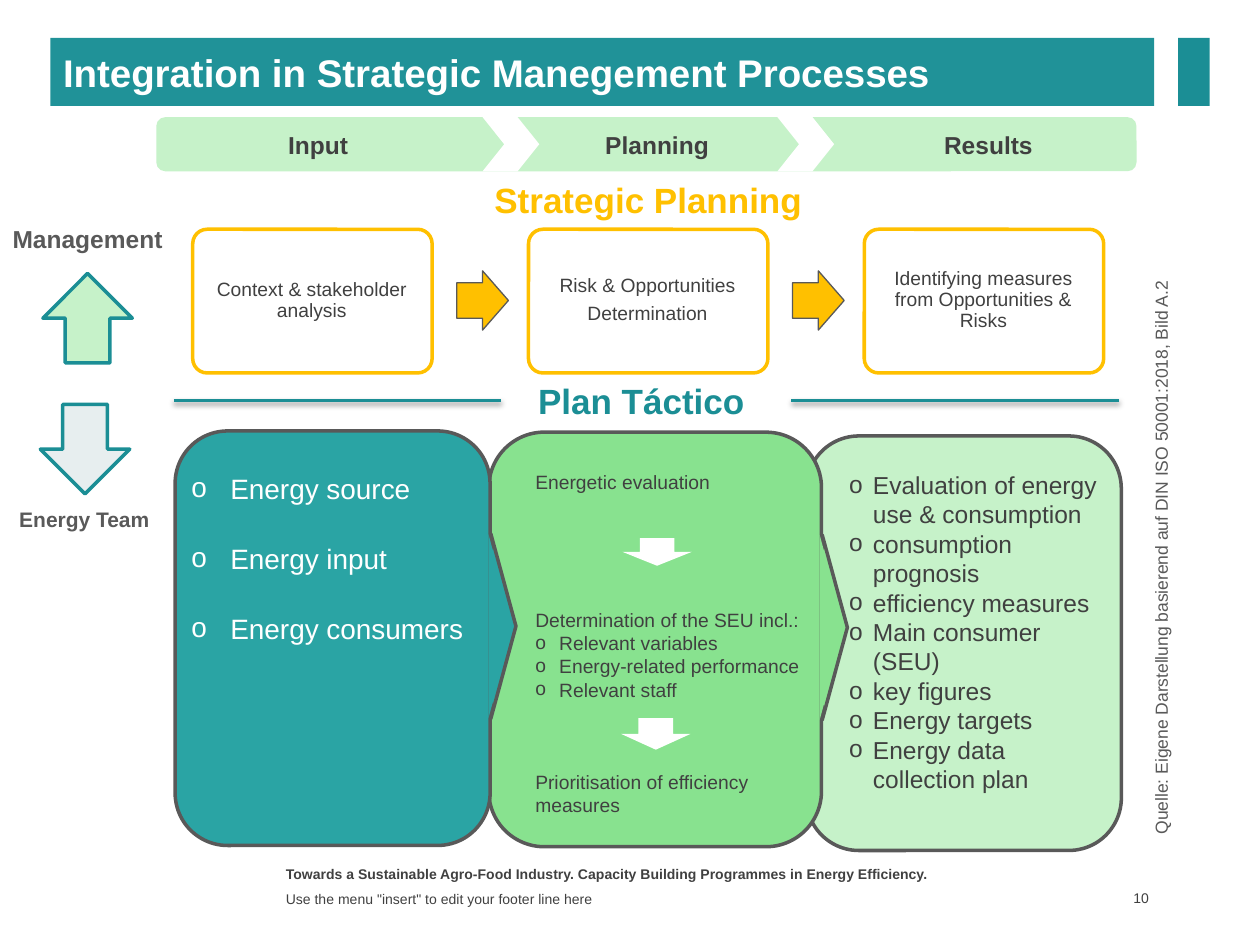
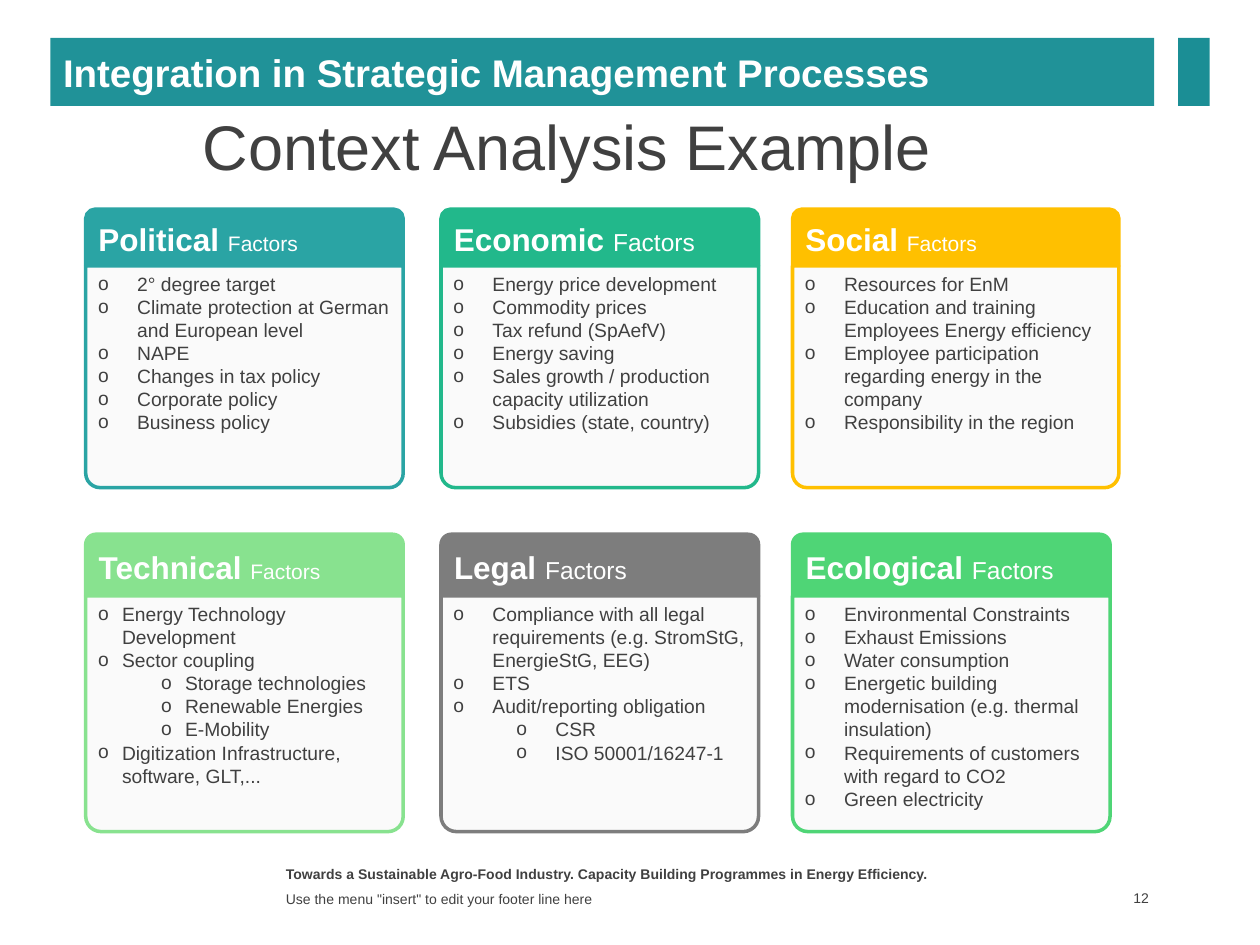
from lxml import etree
from pptx import Presentation
from pptx.dml.color import RGBColor
from pptx.enum.shapes import MSO_CONNECTOR, MSO_SHAPE
from pptx.enum.text import MSO_ANCHOR, MSO_AUTO_SIZE, PP_ALIGN
from pptx.oxml.ns import qn
from pptx.util import Inches, Pt

COLORS = {
    "text": "404040", "grey": "595959", "white": "FFFFFF", "panel": "FAFAFA",
    "title": "209298", "teal": "1B8E95", "sea": "2AA4A4", "emerald": "22B88B",
    "yellow": "FFC000", "green": "88E28F", "mint": "C6F2C9", "mist": "E7EEEF",
    "slate": "7D7D7D", "leaf": "4FD576",
}
FONT = "Arial"
TITLE_ONLY = 5
CENTER = PP_ALIGN.CENTER
MIDDLE = MSO_ANCHOR.MIDDLE


def rgb(name):
    return RGBColor.from_string(COLORS[name])


def add_paragraph(frame, text, size=11, color="text", bold=False, align=PP_ALIGN.LEFT,
                  indent=0, level=0, before=None, after=None, spacing=None):
    first = frame.paragraphs[0]
    paragraph = frame.add_paragraph() if first.runs else first
    if indent:
        properties = paragraph._p.get_or_add_pPr()
        properties.set("marL", str(Inches(indent + level / 2)))
        properties.set("indent", str(-Inches(indent)))
        etree.SubElement(properties, qn("a:buFont")).set("typeface", FONT)
        etree.SubElement(properties, qn("a:buChar")).set("char", "o")
    paragraph.level = level
    paragraph.alignment = align
    if before is not None:
        paragraph.space_before = Pt(before)
    if after is not None:
        paragraph.space_after = Pt(after)
    if spacing is not None:
        paragraph.line_spacing = spacing
    pieces = [(text, size, bold)] if isinstance(text, str) else text
    for piece, piece_size, piece_bold in pieces:
        run = paragraph.add_run()
        run.text = piece
        run.font.name = FONT
        run.font.size = Pt(piece_size)
        run.font.bold = piece_bold
        run.font.color.rgb = rgb(color)


class SlideBuilder:
    def __init__(self, presentation):
        self.presentation = presentation
        self.slide = None

    def start(self, title, number):
        layout = self.presentation.slide_layouts[TITLE_ONLY]
        self.slide = self.presentation.slides.add_slide(layout)
        shape = self.slide.shapes.title
        shape.left, shape.top, shape.width, shape.height = map(Inches, (0.4, 0.3, 8.76, 0.54))
        shape.fill.solid()
        shape.fill.fore_color.rgb = rgb("title")
        self.prepare(shape.text_frame, MIDDLE)
        add_paragraph(shape.text_frame, title, size=22, color="white", bold=True)
        self.shape(MSO_SHAPE.RECTANGLE, 9.35, 0.3, 0.25, 0.54, "teal")
        self.text("Towards a Sustainable Agro-Food Industry. Capacity Building Programmes "
                  "in Energy Efficiency.", 2.17, 6.82, 5.5, 0.21, size=8, bold=True)
        self.text('Use the menu "insert" to edit your footer line here',
                  2.17, 7.04, 5.5, 0.19, MIDDLE, size=8)
        page = self.text(str(number), 8.6, 7.03, 0.56, 0.2, MIDDLE, size=8,
                         align=PP_ALIGN.RIGHT)
        page.margin_right = Inches(0.04)

    def prepare(self, frame, anchor):
        frame.word_wrap = True
        frame.auto_size = MSO_AUTO_SIZE.NONE
        frame.vertical_anchor = anchor

    def shape(self, kind, left, top, width, height, fill, line=None, line_width=2,
              rotation=0, adjustments=()):
        shape = self.slide.shapes.add_shape(kind, *map(Inches, (left, top, width, height)))
        shape.shadow.inherit = False
        shape.rotation = rotation
        for index, value in enumerate(adjustments):
            shape.adjustments[index] = value
        shape.fill.solid()
        shape.fill.fore_color.rgb = rgb(fill)
        if line:
            shape.line.color.rgb = rgb(line)
            shape.line.width = Pt(line_width)
        else:
            shape.line.fill.background()
        return shape

    def text(self, text, left, top, width, height, anchor=MSO_ANCHOR.TOP, rotation=0, **style):
        box = self.slide.shapes.add_textbox(*map(Inches, (left, top, width, height)))
        box.rotation = rotation
        frame = box.text_frame
        self.prepare(frame, anchor)
        for line in [text] if isinstance(text, str) else text:
            add_paragraph(frame, line, **style)
        return frame

    def divider(self, left, right, top):
        connector = self.slide.shapes.add_connector(
            MSO_CONNECTOR.STRAIGHT, *map(Inches, (left, top, right, top)))
        connector.line.color.rgb = rgb("teal")
        connector.line.width = Pt(2)
        effects = etree.SubElement(connector._element.spPr, qn("a:effectLst"))
        shadow = etree.SubElement(effects, qn("a:outerShdw"), blurRad=str(Pt(3.1)),
                                  dist=str(Pt(1.6)), dir="5400000", rotWithShape="0")
        black = etree.SubElement(shadow, qn("a:srgbClr"), val="000000")
        etree.SubElement(black, qn("a:alpha"), val="38000")

    def step_block(self, left, top, width, fill, pointer=None):
        self.shape(MSO_SHAPE.ROUNDED_RECTANGLE, left, top, width, 3.29, fill, "grey")
        if pointer:
            self.shape(MSO_SHAPE.ISOSCELES_TRIANGLE, pointer, top + 1.45, 1.47, 0.2,
                       fill, "grey", rotation=90)
            self.shape(MSO_SHAPE.ISOSCELES_TRIANGLE, pointer - 0.02, top + 1.45, 1.47, 0.2,
                       fill, rotation=90)

    def factor_card(self, left, top, width, header, bottom, name, size, color, indent, items):
        head = self.shape(MSO_SHAPE.ROUND_2_SAME_RECTANGLE, left, top, width, header,
                          color, color)
        frame = head.text_frame
        self.prepare(frame, MIDDLE)
        frame.margin_left = Inches(0.08)
        add_paragraph(frame, [(name + " ", 18, True), ("Factors", size, False)], color="white")
        body = top + header
        self.shape(MSO_SHAPE.ROUND_2_SAME_RECTANGLE, left, body, width, bottom - body,
                   "panel", color, rotation=180, adjustments=(0.065, 0))
        frame = self.text([], left, body, 2.52, bottom - body)
        for item in items:
            if isinstance(item, str):
                add_paragraph(frame, item, indent=indent)
            else:
                for detail in item:
                    add_paragraph(frame, detail, indent=indent, level=1)


def build_process_slide(builder):
    builder.start("Integration in Strategic Manegement Processes", 10)

    builder.shape(MSO_SHAPE.ROUNDED_RECTANGLE, 1.24, 0.93, 7.78, 0.43, "mint")
    for left in (3.83, 6.17):
        builder.shape(MSO_SHAPE.CHEVRON, left, 0.93, 0.45, 0.43, "white", adjustments=(0.4,))
    for phase, left, width in (("Input", 1.22, 2.61), ("Planning", 4.27, 1.89),
                               ("Results", 6.61, 2.47)):
        builder.text(phase, left, 0.98, width, 0.34, size=14, bold=True, align=CENTER)

    heading = {"size": 20, "bold": True, "align": CENTER}
    builder.text("Strategic Planning", 3.45, 1.37, 3.39, 0.43, color="yellow", **heading)
    builder.text("Plan Táctico", 3.94, 2.96, 2.3, 0.46, color="teal", **heading)
    builder.divider(1.38, 3.98, 3.18)
    builder.divider(6.28, 8.88, 3.18)

    strategy_steps = (
        ["Context & stakeholder analysis"],
        ["Risk & Opportunities", "Determination"],
        ["Identifying measures from Opportunities & Risks"],
    )
    for index, step in enumerate(strategy_steps):
        left = 1.53 + index * 2.665
        if index:
            builder.shape(MSO_SHAPE.RIGHT_ARROW, left - 0.57, 2.15, 0.41, 0.47, "yellow",
                          "grey", 0.75, adjustments=(0.6, 0.5))
        builder.shape(MSO_SHAPE.ROUNDED_RECTANGLE, left, 1.82, 1.9, 1.14, "white", "yellow",
                      adjustments=(0.1,))
        frame = builder.text(step, left + 0.03, 1.85, 1.83, 1.07, MIDDLE,
                             align=CENTER, after=4, spacing=0.9)
        frame.margin_left = frame.margin_right = Inches(0.05)

    role = {"color": "grey", "bold": True, "align": CENTER}
    builder.text("Management", 0, 1.73, 1.39, 0.42, size=14, **role)
    builder.text("Energy Team", 0, 3.92, 1.34, 0.87, size=12, spacing=Pt(18), **role)
    builder.shape(MSO_SHAPE.RIGHT_ARROW, 0.34, 2.17, 0.71, 0.71, "mint", "teal", rotation=270)
    builder.shape(MSO_SHAPE.RIGHT_ARROW, 0.32, 3.21, 0.71, 0.71, "mist", "teal", rotation=90)
    builder.text("Quelle: Eigene Darstellung basierend auf DIN ISO 50001:2018, Bild A.2",
                 6.95, 4.18, 4.67, 0.41, rotation=270, size=10, color="grey")

    builder.step_block(6.4, 3.46, 2.5, "mint")
    builder.step_block(3.88, 3.43, 2.64, "green", 5.89)
    builder.step_block(1.39, 3.42, 2.5, "sea", 3.26)

    frame = builder.text([], 1.42, 3.68, 2.47, 1.48)
    for index, item in enumerate(("Energy source", "Energy input", "Energy consumers")):
        add_paragraph(frame, item, size=16, color="white", indent=0.31, spacing=Pt(20),
                      before=20 if index else 0)

    frame = builder.text("Energetic evaluation", 4.15, 3.68, 2.47, 2.88)
    add_paragraph(frame, "Determination of the SEU incl.:", before=66)
    for item in ("Relevant variables", "Energy-related performance", "Relevant staff"):
        add_paragraph(frame, item, indent=0.19)
    add_paragraph(frame, "Prioritisation of efficiency measures", before=39.5)
    builder.shape(MSO_SHAPE.DOWN_ARROW, 4.94, 4.27, 0.55, 0.22, "white")
    builder.shape(MSO_SHAPE.DOWN_ARROW, 4.93, 5.7, 0.55, 0.25, "white")

    results = ["Evaluation of energy use & consumption", "consumption prognosis",
               "efficiency measures", "Main consumer (SEU)", "key figures",
               "Energy targets", "Energy data collection plan"]
    builder.text(results, 6.64, 3.68, 2.24, 2.69, size=14, indent=0.19)


def build_context_slide(builder):
    builder.start("Integration in Strategic Management Processes", 12)
    builder.text("Context Analysis Example", 0.12, 0.8, 8.76, 0.71, size=36, align=CENTER)

    columns = (0.68, 3.5, 6.29)
    rows = ((1.66, 0.45, 3.87), (4.24, 0.49, 6.6))
    factors = (
        ("Political", 12, "sea", 0.31, [
            "2° degree target", "Climate protection at German and European level", "NAPE",
            "Changes in tax policy", "Corporate policy", "Business policy"]),
        ("Economic", 14, "emerald", 0.31, [
            "Energy price development", "Commodity prices", "Tax refund (SpAefV)",
            "Energy saving", "Sales growth / production capacity utilization",
            "Subsidies (state, country)"]),
        ("Social", 12, "yellow", 0.31, [
            "Resources for EnM", "Education and training Employees Energy efficiency",
            "Employee participation regarding energy in the company",
            "Responsibility in the region"]),
        ("Technical", 12, "green", 0.19, [
            "Energy Technology Development", "Sector coupling",
            ["Storage technologies", "Renewable Energies", "E-Mobility"],
            "Digitization Infrastructure, software, GLT,..."]),
        ("Legal", 14, "slate", 0.31, [
            "Compliance with all legal requirements (e.g. StromStG, EnergieStG, EEG)",
            "ETS", "Audit/reporting obligation", ["CSR", "ISO 50001/16247-1"]]),
        ("Ecological", 14, "leaf", 0.31, [
            "Environmental Constraints", "Exhaust Emissions", "Water consumption",
            "Energetic building modernisation (e.g. thermal insulation)",
            "Requirements of customers with regard to CO2", "Green electricity"]),
    )
    for index, factor in enumerate(factors):
        row, column = divmod(index, len(columns))
        top, header, bottom = rows[row]
        width = 2.59 if factor[0] == "Social" else 2.52
        builder.factor_card(columns[column], top, width, header, bottom, *factor)


def main():
    presentation = Presentation()
    presentation.slide_width = Inches(10)
    presentation.slide_height = Inches(7.5)
    builder = SlideBuilder(presentation)
    build_process_slide(builder)
    build_context_slide(builder)
    presentation.save("out.pptx")


if __name__ == "__main__":
    main()
